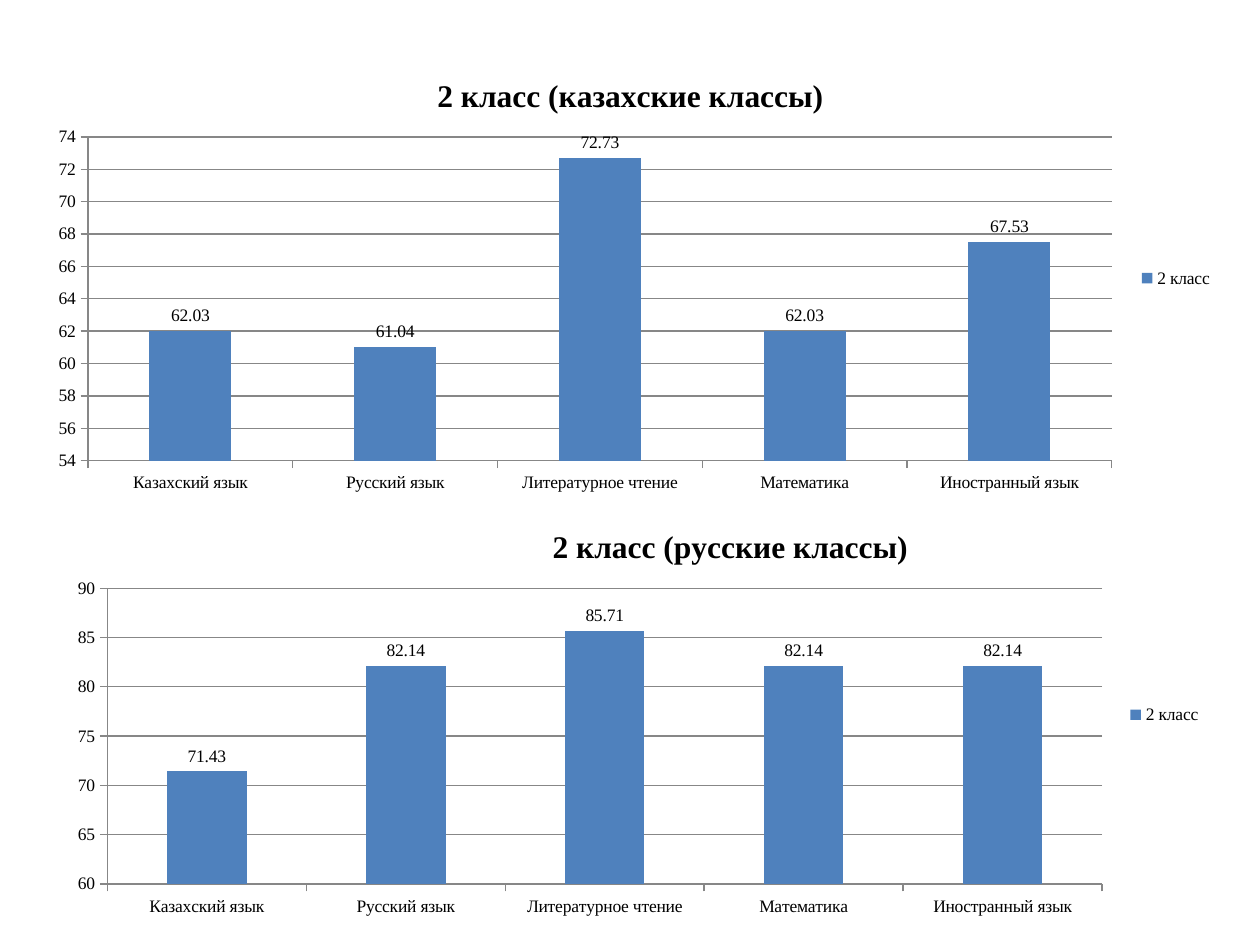
from lxml.etree import SubElement
from pptx import Presentation
from pptx.chart.data import CategoryChartData
from pptx.dml.color import RGBColor
from pptx.enum.chart import XL_CHART_TYPE as ChartType
from pptx.enum.chart import XL_LABEL_POSITION as LabelPosition
from pptx.enum.chart import XL_LEGEND_POSITION as LegendPosition
from pptx.enum.chart import XL_TICK_MARK as TickMark
from pptx.oxml.ns import qn
from pptx.util import Pt

BLACK = RGBColor(0x00, 0x00, 0x00)
BLUE = RGBColor(0x4F, 0x81, 0xBD)
GRAY = RGBColor(0x87, 0x87, 0x87)
FONT = "Times New Roman"

SUBJECTS = ["Казахский язык", "Русский язык", "Литературное чтение",
            "Математика", "Иностранный язык"]


def format_font(font, size=10, bold=False, color=BLACK):
    font.name = FONT
    font.size = Pt(size)
    font.bold = bold
    font.color.rgb = color


def write_text(frame, text, **font_format):
    run = frame.paragraphs[0].add_run()
    run.text = text
    format_font(run.font, **font_format)


def place_part(part, index, frame, box, inner=False):
    """Fix a chart part at a box of slide points, as fractions of the chart frame."""
    for old_layout in part.findall(qn("c:layout")):
        part.remove(old_layout)
    layout = SubElement(part, qn("c:layout"))
    part.insert(index, layout)
    manual = SubElement(layout, qn("c:manualLayout"))
    left, top, width, height = frame
    settings = [("layoutTarget", "inner")] if inner else []
    settings += [("xMode", "edge"), ("yMode", "edge")]
    settings += [("x", (box[0] - left) / width), ("y", (box[1] - top) / height)]
    if len(box) == 4:
        settings += [("w", box[2] / width), ("h", box[3] / height)]
    for name, value in settings:
        SubElement(manual, qn(f"c:{name}")).set("val", str(value))


def format_axes(chart, low, high, step):
    scores = chart.value_axis
    scores.minimum_scale, scores.maximum_scale = low, high
    scores.major_unit = step
    scores.has_major_gridlines = True
    for axis in (scores, chart.category_axis):
        axis.major_tick_mark = TickMark.OUTSIDE
        axis.minor_tick_mark = TickMark.NONE
        axis.format.line.color.rgb = GRAY
        format_font(axis.tick_labels.font)
    scores.major_gridlines.format.line.color.rgb = GRAY


def format_columns(plot):
    plot.gap_width = 150
    plot.vary_by_categories = False
    fill = plot.series[0].format.fill
    fill.solid()
    fill.fore_color.rgb = BLUE
    plot.has_data_labels = True
    labels = plot.data_labels
    labels.show_value = True
    labels.position = LabelPosition.OUTSIDE_END
    format_font(labels.font)


def add_score_chart(slide, title, scores, frame, plot_box, scale, title_at=None):
    data = CategoryChartData()
    data.categories = SUBJECTS
    data.add_series("2 класс", scores)
    chart = slide.shapes.add_chart(
        ChartType.COLUMN_CLUSTERED, *map(Pt, frame), data).chart
    format_font(chart.font)

    chart.has_title = True
    write_text(chart.chart_title.text_frame, title, size=18, bold=True)
    chart.chart_title.include_in_layout = False
    if title_at:
        place_part(chart.element.find(".//" + qn("c:title")), 1, frame, title_at)

    chart.has_legend = True
    chart.legend.position = LegendPosition.RIGHT
    chart.legend.include_in_layout = False
    format_font(chart.legend.font)

    format_axes(chart, *scale)
    format_columns(chart.plots[0])
    place_part(chart.element.find(".//" + qn("c:plotArea")), 0, frame, plot_box, inner=True)


def main():
    deck = Presentation()
    deck.slide_width, deck.slide_height = Pt(720), Pt(540)
    slide = deck.slides.add_slide(deck.slide_layouts[6])
    add_score_chart(slide, "2 класс (казахские классы)",
                    [62.03, 61.04, 72.73, 62.03, 67.53],
                    frame=(20, 31.5, 680.5, 255), plot_box=(50.3, 78.3, 585, 185),
                    scale=(54, 74, 2))
    add_score_chart(slide, "2 класс (русские классы)",
                    [71.43, 82.14, 85.71, 82.14, 82.14],
                    frame=(31, 287.5, 663, 242), plot_box=(61.3, 336.2, 568.5, 169),
                    scale=(60, 90, 5), title_at=(312.5, 298))
    deck.save("out.pptx")


if __name__ == "__main__":
    main()
